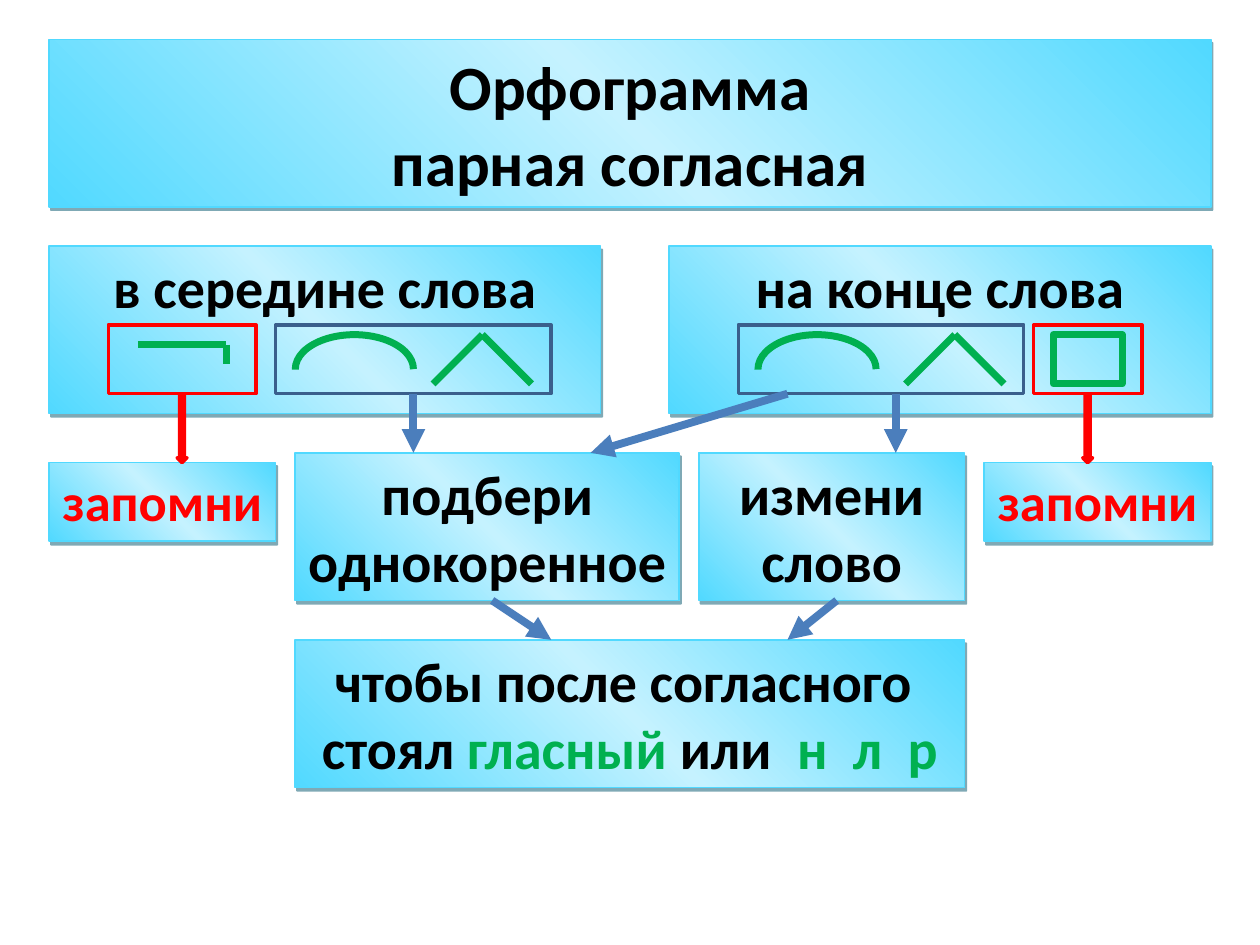
from copy import deepcopy
from dataclasses import dataclass

from lxml import etree
from pptx import Presentation
from pptx import util as u
from pptx.dml.color import RGBColor
from pptx.enum import shapes, text
from pptx.oxml.ns import qn

COLUMNS, ROWS = 128, 96
WIDTH, HEIGHT = u.Inches(10), u.Inches(7.5)


@dataclass(frozen=True)
class Theme:
    font: str = "Calibri"
    edge: str = "51D9FF"
    glow: str = "C5F2FF"
    shadow: str = "00556D"
    ink: str = "000000"
    red: str = "FF0000"
    green: str = "00B050"
    frame: str = "3A5F8C"
    arrow: str = "4B7EBC"
    title_size: int = 36
    body_size: int = 32
    note_size: int = 30


THEME = Theme()


@dataclass(frozen=True)
class Area:
    """Left, top, width and height in grid cells."""
    column: float
    row: float
    columns: float
    rows: float

    def lengths(self) -> tuple:
        return (x(self.column), y(self.row), x(self.columns), y(self.rows))


@dataclass(frozen=True)
class Span:
    text: str
    color: str = THEME.ink


@dataclass(frozen=True)
class Panel:
    area: Area
    lines: tuple
    size: int = THEME.body_size
    space_after: int = 0


@dataclass(frozen=True)
class Stroke:
    start: tuple
    end: tuple
    color: str = THEME.green
    weight: float = 4
    arrow: bool = False


def x(columns: float) -> int:
    return round(WIDTH * columns / COLUMNS)


def y(rows: float) -> int:
    return round(HEIGHT * rows / ROWS)


def rgb(color: str) -> RGBColor:
    return RGBColor.from_string(color)


def set_line(line, color: str, weight: float) -> None:
    line.color.rgb = rgb(color)
    line.width = u.Pt(weight)


def style_panel(box) -> None:
    """Diagonal three-stop gradient, thin edge and a hard shadow."""
    box.fill.gradient()
    box.fill.gradient_angle = 45
    properties = box._element.spPr
    stop_list = properties.find(".//" + qn("a:gsLst"))
    stop_list.append(deepcopy(stop_list[0]))
    colors = (THEME.edge, THEME.glow, THEME.edge)
    for index, (stop, color) in enumerate(zip(box.fill.gradient_stops, colors)):
        stop.position = index / 2
        stop.color.rgb = rgb(color)
    set_line(box.line, THEME.edge, 1)

    effects = etree.SubElement(properties, qn("a:effectLst"))
    shadow = etree.SubElement(effects, qn("a:outerShdw"), blurRad="0",
                              dist=str(u.Pt(2.2)), dir=str(63 * 60000),
                              algn="ctr", rotWithShape="0")
    color = etree.SubElement(shadow, qn("a:srgbClr"), val=THEME.shadow)
    etree.SubElement(color, qn("a:alpha"), val="50000")


def write_panel(box, panel: Panel) -> None:
    frame = box.text_frame
    frame.word_wrap = True
    frame.auto_size = text.MSO_AUTO_SIZE.NONE
    for index, spans in enumerate(panel.lines):
        para = frame.add_paragraph() if index else frame.paragraphs[0]
        para.alignment = text.PP_ALIGN.CENTER
        para.space_after = u.Pt(panel.space_after)
        for span in spans:
            run = para.add_run()
            run.text = span.text
            run.font.name = THEME.font
            run.font.size = u.Pt(panel.size)
            run.font.bold = True
            run.font.color.rgb = rgb(span.color)


def add_panel(page, panel: Panel) -> None:
    box = page.shapes.add_shape(shapes.MSO_SHAPE.RECTANGLE, *panel.area.lengths())
    style_panel(box)
    write_panel(box, panel)
    box.text_frame.vertical_anchor = text.MSO_ANCHOR.TOP


def add_title(page, panel: Panel) -> None:
    title = page.shapes.title
    title.left, title.top, title.width, title.height = panel.area.lengths()
    style_panel(title)
    write_panel(title, panel)
    title.text_frame.vertical_anchor = text.MSO_ANCHOR.MIDDLE


def add_outline(page, kind, area: Area, color: str, weight: float):
    shape = page.shapes.add_shape(kind, *area.lengths())
    shape.shadow.inherit = False
    shape.fill.background()
    set_line(shape.line, color, weight)
    return shape


def add_stroke(page, stroke: Stroke) -> None:
    (x1, y1), (x2, y2) = stroke.start, stroke.end
    line = page.shapes.add_connector(shapes.MSO_CONNECTOR.STRAIGHT,
                                     x(x1), y(y1), x(x2), y(y2))
    set_line(line.line, stroke.color, stroke.weight)
    if stroke.arrow:
        etree.SubElement(line.line._get_or_add_ln(), qn("a:tailEnd"), type="triangle")
    etree.SubElement(line._element.spPr, qn("a:effectLst"))


def add_root(page, column: float) -> None:
    """The arc that marks a word root."""
    arc = add_outline(page, shapes.MSO_SHAPE.ARC, Area(column, 34, 12, 7), THEME.green, 4)
    arc.adjustments[0] = 107.73
    arc.adjustments[1] = 0


def add_suffix(page, column: float) -> None:
    """The roof that marks a suffix."""
    peak = (column + 5, 34)
    for foot in (column, column + 10):
        add_stroke(page, Stroke((foot, 39), peak))


def add_down_arrow(page, column: float) -> None:
    arrow = add_outline(page, shapes.MSO_SHAPE.DOWN_ARROW, Area(column, 40, 1, 7),
                        THEME.red, 2)
    arrow.fill.solid()
    arrow.fill.fore_color.rgb = rgb(THEME.red)


TITLE = Panel(Area(5, 4, 118, 17),
              ((Span("Орфограмма"),), (Span("парная согласная"),)), THEME.title_size)
REMEMBER = ((Span("запомни", THEME.red),),)
PANELS = (
    Panel(Area(5, 25, 56, 17), ((Span("в середине слова"),),)),
    Panel(Area(68, 25, 55, 17), ((Span("на конце слова"),),)),
    Panel(Area(5, 47, 23, 8), REMEMBER, THEME.note_size),
    Panel(Area(100, 47, 23, 8), REMEMBER, THEME.note_size),
    Panel(Area(30, 46, 39, 15), ((Span("подбери однокоренное"),),), space_after=10),
    Panel(Area(71, 46, 27, 15), ((Span("измени слово"),),), space_after=10),
    Panel(Area(30, 65, 68, 15), (
        (Span("чтобы после согласного "),),
        (Span("стоял "), Span("гласный ", THEME.green), Span("или  "),
         Span("н  л  р", THEME.green)))),
)
# Left column, width and colour of the frames around the word parts
FRAMES = ((11, 15, THEME.red), (28, 28, THEME.frame),
          (75, 29, THEME.frame), (105, 11, THEME.red))
PREFIX = (Stroke((14, 35), (23, 35)), Stroke((23, 35), (23, 37)))
ARROWS = (((80, 40), (60, 46)), ((91, 40), (91, 46)), ((42, 40), (42, 46)),
          ((85, 61), (80, 65)), ((50, 61), (56, 65)))


def main() -> None:
    deck = Presentation()
    deck.slide_width, deck.slide_height = WIDTH, HEIGHT
    page = deck.slides.add_slide(deck.slide_layouts.get_by_name("Title Only"))

    # Title and text panels
    add_title(page, TITLE)
    for panel in PANELS:
        add_panel(page, panel)

    # Word parts: prefix, roots, suffixes, ending
    for stroke in PREFIX:
        add_stroke(page, stroke)
    for root, suffix in ((30, 44), (77, 92)):
        add_root(page, root)
        add_suffix(page, suffix)
    rectangle = shapes.MSO_SHAPE.RECTANGLE
    add_outline(page, rectangle, Area(107, 34, 7, 5), THEME.green, 4)
    for column, columns, color in FRAMES:
        add_outline(page, rectangle, Area(column, 33, columns, 7), color, 2)

    # Arrows between the panels
    for column in (18, 110):
        add_down_arrow(page, column)
    for start, end in ARROWS:
        add_stroke(page, Stroke(start, end, THEME.arrow, 4.5, arrow=True))

    deck.save("out.pptx")


if __name__ == "__main__":
    main()
